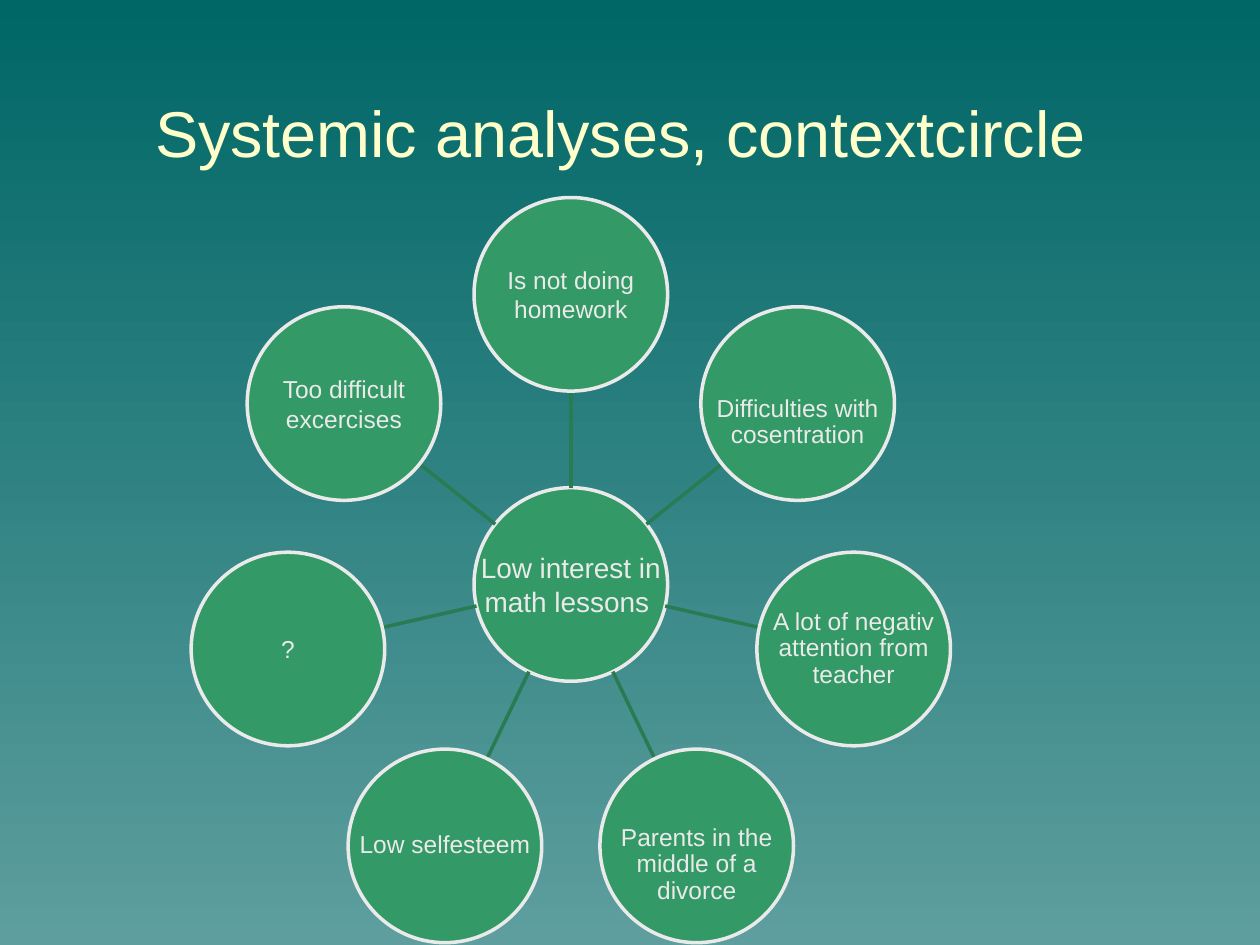
from math import cos, sin, tau

from lxml.etree import SubElement
from pptx import Presentation
from pptx.dml.color import RGBColor
from pptx.enum.shapes import MSO_CONNECTOR, MSO_SHAPE
from pptx.enum.text import MSO_ANCHOR, PP_ALIGN
from pptx.oxml.ns import qn
from pptx.util import Pt

TITLE = "Systemic analyses, contextcircle"
HUB = "Low interest in math lessons "
# text, line spacing, top inset
FACTORS = [
    ("Is not doing homework", 1, 0.7),
    ("Difficulties with cosentration", 0.9, 22.5),
    ("A lot of negativ attention from teacher", 0.9, 0.7),
    ("Parents in the middle of a divorce", 0.9, 22.5),
    ("Low selfesteem", 0.9, 0.7),
    ("?", 1, 0.7),
    ("Too difficult excercises", 1, 0.7),
]
COLORS = {
    "top": "006666", "bottom": "5E9E9E", "title": "FFFFCC",
    "circle": "339966", "pale": "EAEAEA", "spoke": "297B52",
}
CX, CY = 326.2, 334
ORBIT = 165.8
RADIUS = 55.3


def rgb(name):
    return RGBColor.from_string(COLORS[name])


def add_text(s, text, box, size, color, spacing=1, top=0.7):
    tf = s.shapes.add_textbox(*map(Pt, box)).text_frame
    tf.word_wrap = True
    tf.vertical_anchor = MSO_ANCHOR.MIDDLE
    tf.margin_left = tf.margin_right = tf.margin_bottom = Pt(0.7)
    tf.margin_top = Pt(top)
    p = tf.paragraphs[0]
    p.text = text
    p.alignment = PP_ALIGN.CENTER
    p.line_spacing = spacing
    p.font.name = "Arial"
    p.font.size = Pt(size)
    p.font.color.rgb = rgb(color)


def add_circle(s, x, y, text, size, spacing=1, top=0.7):
    box = (x - RADIUS, y - RADIUS, 2 * RADIUS, 2 * RADIUS)
    sp = s.shapes.add_shape(MSO_SHAPE.OVAL, *map(Pt, box))
    sp.shadow.inherit = False
    sp.fill.solid()
    sp.fill.fore_color.rgb = rgb("circle")
    sp.line.color.rgb = rgb("pale")
    sp.line.width = Pt(2)
    add_text(s, text, box, size, "pale", spacing, top)


def add_spoke(s, dx, dy):
    ends = [CX + RADIUS * dx, CY + RADIUS * dy,
            CX + (ORBIT - RADIUS) * dx, CY + (ORBIT - RADIUS) * dy]
    line = s.shapes.add_connector(MSO_CONNECTOR.STRAIGHT, *map(Pt, ends))
    line.line.color.rgb = rgb("spoke")
    line.line.width = Pt(2)
    SubElement(line._element.spPr, qn("a:effectLst"))


def main():
    prs = Presentation()
    prs.slide_width, prs.slide_height = Pt(720), Pt(540)
    s = prs.slides.add_slide(prs.slide_layouts[6])

    fill = s.background.fill
    fill.gradient()
    fill.gradient_angle = 270
    for stop, name, position in zip(fill.gradient_stops, ("top", "bottom"), (0, 1)):
        stop.color.rgb = rgb(name)
        stop.position = position

    add_text(s, TITLE, (36.7, 59, 635.8, 32), 37, "title")
    add_circle(s, CX, CY, HUB, 16)
    for i, (text, spacing, top) in enumerate(FACTORS):
        angle = tau * i / len(FACTORS)
        dx, dy = sin(angle), -cos(angle)
        add_spoke(s, dx, dy)
        add_circle(s, CX + ORBIT * dx, CY + ORBIT * dy, text, 14, spacing, top)

    prs.save("out.pptx")


if __name__ == "__main__":
    main()
